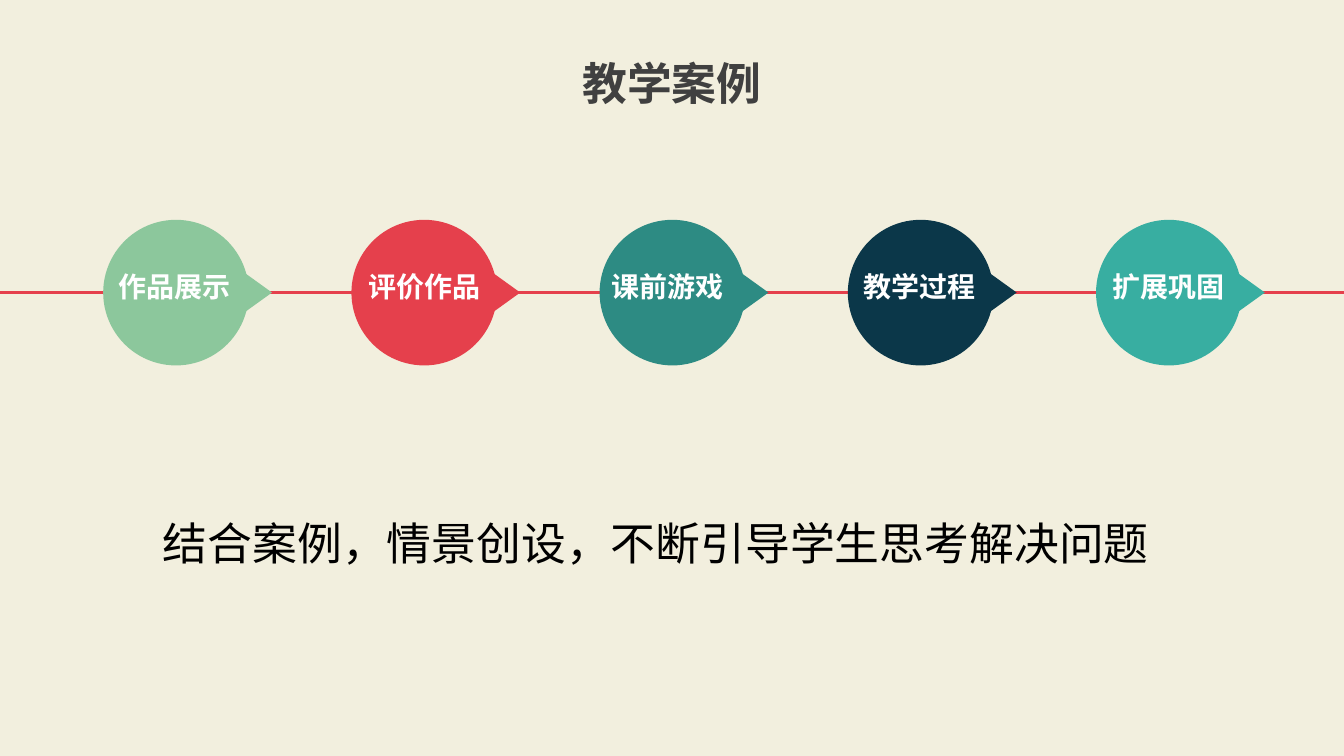
import dataclasses

import pptx
import pptx.dml.color
import pptx.enum.shapes
import pptx.enum.text
import pptx.oxml
import pptx.util

Pt = pptx.util.Pt
RGB = pptx.dml.color.RGBColor.from_string
SHAPE = pptx.enum.shapes.MSO_SHAPE
ALIGN = pptx.enum.text.PP_ALIGN


@dataclasses.dataclass(frozen=True)
class Theme:
    background: str = "F2EFDE"
    line: str = "E5404C"
    heading: str = "404040"
    body: str = "000000"
    label: str = "FFFFFF"
    steps: tuple = ("8CC79C", "E5404C", "2D8B83", "0B3749", "38AEA1")
    large: int = 32
    small: int = 20
    heading_font: str = "Noto Sans CJK SC"
    label_font: str = "Open Sans"
    body_font: str = "Arial"


class Deck:
    """Draws styled elements on the current slide."""

    def __init__(self, theme):
        self.theme = theme
        self.prs = pptx.Presentation()
        self.prs.slide_width, self.prs.slide_height = Pt(960), Pt(540)

    def add_slide(self):
        self.s = self.prs.slides.add_slide(self.prs.slide_layouts[6])
        fill = self.s.background.fill
        fill.solid()
        fill.fore_color.rgb = RGB(self.theme.background)

    def line(self, x1, x2, y):
        kind = pptx.enum.shapes.MSO_CONNECTOR.STRAIGHT
        sp = self.s.shapes.add_connector(kind, Pt(x1), Pt(y), Pt(x2), Pt(y))
        sp.line.color.rgb = RGB(self.theme.line)
        sp.line.width = Pt(2.25)
        sp._element.spPr.append(pptx.oxml.parse_xml(
            '<a:effectLst xmlns:a="http://schemas.openxmlformats.org/drawingml/2006/main"/>'))

    def shape(self, shapes, kind, x, y, w, h, color, rotation=0):
        sp = shapes.add_shape(kind, Pt(x), Pt(y), Pt(w), Pt(h))
        sp.shadow.inherit = False
        sp.fill.solid()
        sp.fill.fore_color.rgb = RGB(color)
        sp.line.fill.background()
        sp.rotation = rotation

    def text(self, shapes, text, x, y, w, h, font, size, color, bold=True, align=ALIGN.CENTER):
        tf = shapes.add_textbox(Pt(x), Pt(y), Pt(w), Pt(h)).text_frame
        tf.word_wrap = True
        tf.auto_size = pptx.enum.text.MSO_AUTO_SIZE.SHAPE_TO_FIT_TEXT
        p = tf.paragraphs[0]
        p.text = text
        p.alignment = align
        p.font.name, p.font.size, p.font.bold = font, Pt(size), bold
        p.font.color.rgb = RGB(color)

    def step(self, label, x, nudge, color):
        t = self.theme
        shapes = self.s.shapes.add_group_shape().shapes
        self.shape(shapes, SHAPE.OVAL, x, 157, 104, 104, color)
        self.shape(shapes, SHAPE.ISOSCELES_TRIANGLE, x + 96.2, 199, 28.8, 20, color, 90)
        self.text(shapes, label, x + nudge, 188.6, 98.6, 31.5, t.label_font, t.small, t.label)


def main():
    t = Theme()
    deck = Deck(t)
    deck.add_slide()
    deck.line(-4, 962, 209)
    labels = ("作品展示", "评价作品", "课前游戏", "教学过程", "扩展巩固")
    nudges = (1.9, 3.2, -0.6, 2.1, 2.6)
    for i, (label, nudge, color) in enumerate(zip(labels, nudges, t.steps)):
        deck.step(label, 73.7 + 177.3 * i, nudge, color)
    shapes = deck.s.shapes
    deck.text(shapes, "教学案例", 244, 36, 472, 46, t.heading_font, t.large, t.heading)
    deck.text(shapes, "结合案例，情景创设，不断引导学生思考解决问题", 109.2, 365, 764, 46,
              t.body_font, t.large, t.body, bold=False, align=ALIGN.LEFT)
    deck.prs.save("out.pptx")


if __name__ == "__main__":
    main()
